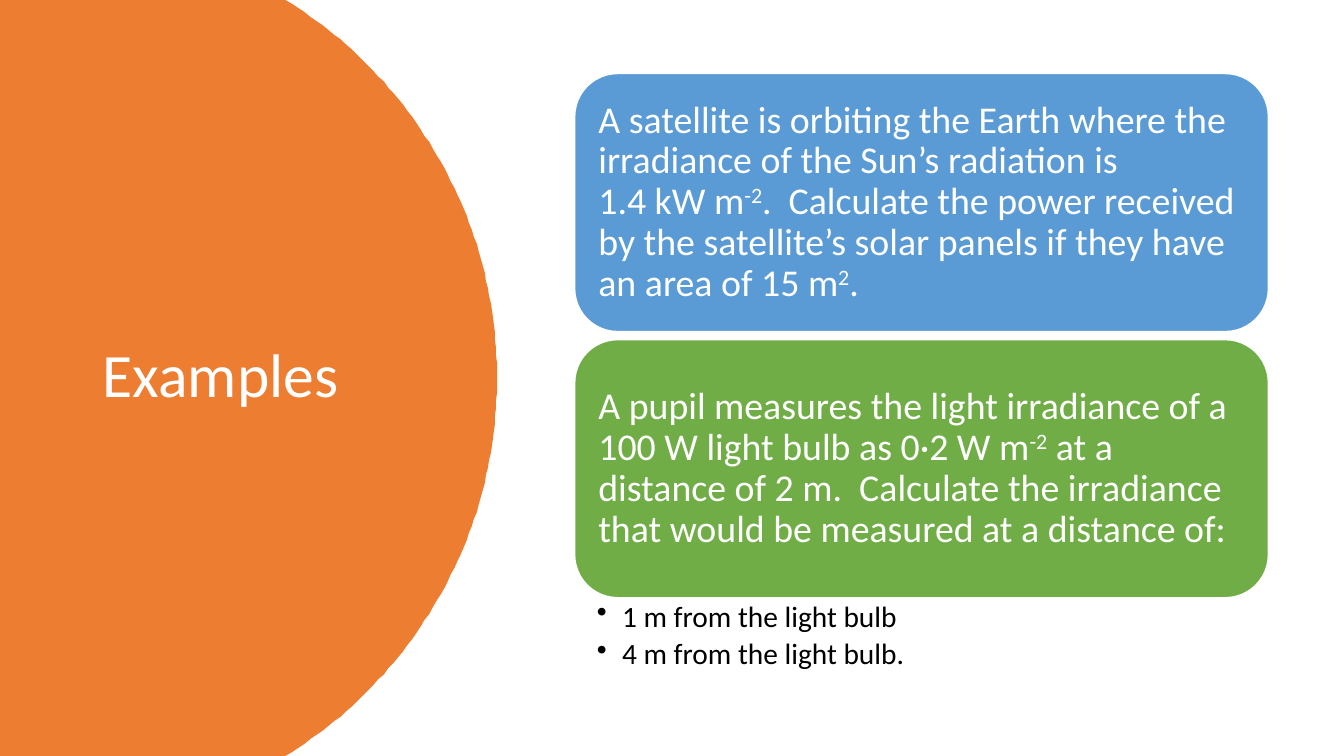
import math

from lxml import etree
from pptx import Presentation, util as u
from pptx.dml.color import RGBColor
from pptx.enum import shapes, text
from pptx.oxml import ns

# Content: "^" marks a superscript span, "\n" a line break
TITLE = "Examples"
QUESTIONS = [
    ("blue", ["A satellite is orbiting the Earth where the irradiance of the Sun’s radiation is ",
              "\n", "1.4 kW m", "^-2",
              ".  Calculate the power received by the satellite’s solar panels "
              "if they have an area of 15 m", "^2", "."]),
    ("green", ["A pupil measures the light irradiance of a 100 W light bulb as 0·2 W m", "^-2",
               " at a distance of 2 m.  Calculate the irradiance "
               "that would be measured at a distance of:"]),
]
DISTANCES = ["1 m from the light bulb", "4 m from the light bulb."]

COLORS = {"orange": "ED7D31", "blue": "5B9BD5", "green": "70AD47",
          "white": "FFFFFF", "black": "000000"}
FONT = "Calibri"

# Layout in px, 100 px to the inch
PX = 9144
PAGE_W, PAGE_H = 1333, 750
CIRCLE_X, CIRCLE_R = 53, 440
CARD_X, CARD_Y, CARD_W, CARD_H, CARD_STEP = 570, 73, 688, 256, 264
ARC_STEPS = 120


def px(*lengths):
    return [u.Emu(length * PX) for length in lengths]


def color(name):
    return RGBColor.from_string(COLORS[name])


def paint(shape, fill, line=None):
    shape.shadow.inherit = False
    shape.fill.solid()
    shape.fill.fore_color.rgb = color(fill)
    if line:
        shape.line.color.rgb = color(line)
        shape.line.width = u.Pt(1)
    else:
        shape.line.fill.background()


def set_frame(shape, margins, anchor):
    frame = shape.text_frame
    frame.word_wrap = True
    frame.vertical_anchor = anchor
    (frame.margin_left, frame.margin_top,
     frame.margin_right, frame.margin_bottom) = px(*margins)
    return frame


def style(para, size, font_color):
    para.alignment = text.PP_ALIGN.LEFT
    para.line_spacing = 0.9
    para.font.name = FONT
    para.font.size = u.Pt(size)
    para.font.color.rgb = color(font_color)


def add_spans(para, spans):
    for part in spans:
        if part == "\n":
            para.add_line_break()
            continue
        span = para.add_run()
        span.text = part.lstrip("^")
        if part.startswith("^"):
            span.font._element.set("baseline", "30000")


def add_bullet(para):
    props = para._p.get_or_add_pPr()
    props.set("marL", str(25 * PX))
    props.set("indent", str(-25 * PX))
    bullet = etree.Element(ns.qn("a:buChar"), char="•")
    props.find(ns.qn("a:defRPr")).addprevious(bullet)


deck = Presentation()
deck.slide_width, deck.slide_height = px(PAGE_W, PAGE_H)
page = deck.slides.add_slide(deck.slide_layouts[6])

# Orange circle, cut off by the page edges
half_angle = math.asin(PAGE_H / 2 / CIRCLE_R)
angles = [half_angle * (2 * i / ARC_STEPS - 1) for i in range(ARC_STEPS + 1)]
arc = [(CIRCLE_X + CIRCLE_R * math.cos(a), PAGE_H / 2 + CIRCLE_R * math.sin(a))
       for a in angles]
outline = page.shapes.build_freeform(0, 0, scale=PX)
outline.add_line_segments(arc + [(0, PAGE_H)], close=True)
paint(outline.convert_to_shape(), "orange")

# Title
box = page.shapes.add_textbox(*px(92, 70, 323, 609))
para = set_frame(box, (10, 5, 10, 5), text.MSO_ANCHOR.MIDDLE).paragraphs[0]
para.text = TITLE
style(para, 44, "white")

# Question cards
for row, (fill, spans) in enumerate(QUESTIONS):
    card = page.shapes.add_shape(
        shapes.MSO_SHAPE.ROUNDED_RECTANGLE,
        *px(CARD_X, CARD_Y + row * CARD_STEP, CARD_W, CARD_H))
    paint(card, fill, "white")
    para = set_frame(card, (11, 11, 11, 11), text.MSO_ANCHOR.MIDDLE).paragraphs[0]
    add_spans(para, spans)
    style(para, 27, "white")

# Bulleted distances below the last card
list_y = CARD_Y + CARD_STEP + CARD_H
box = page.shapes.add_textbox(*px(CARD_X, list_y, CARD_W, 79))
frame = set_frame(box, (22, 4, 21, 4), text.MSO_ANCHOR.TOP)
for row, distance in enumerate(DISTANCES):
    para = frame.add_paragraph() if row else frame.paragraphs[0]
    para.text = distance
    style(para, 21, "black")
    para.space_after = u.Pt(4.2)
    add_bullet(para)

deck.save("out.pptx")
